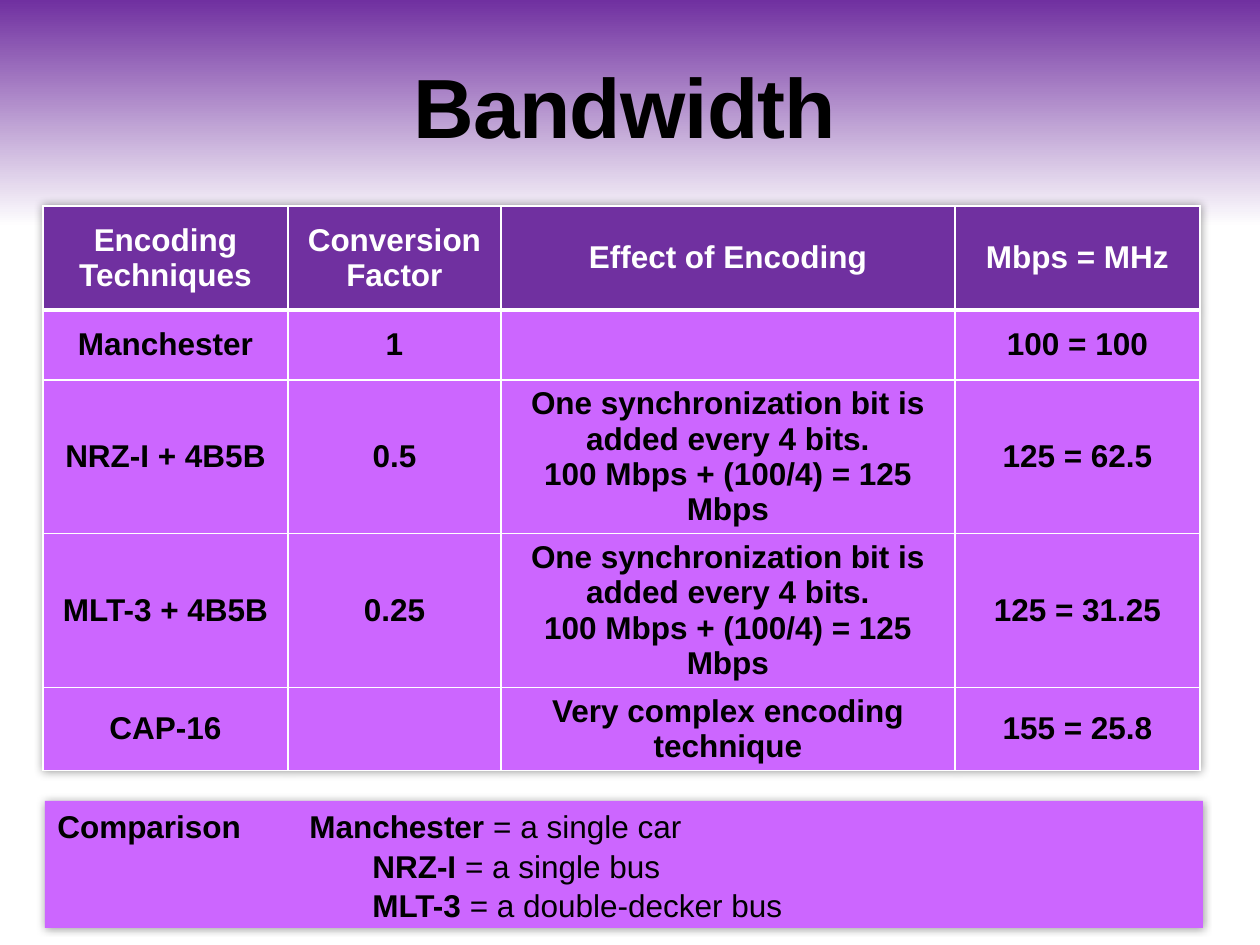
from dataclasses import dataclass

from lxml import etree
from pptx import Presentation
from pptx.dml.color import RGBColor
from pptx.enum.shapes import MSO_SHAPE
from pptx.enum.text import MSO_ANCHOR, MSO_AUTO_SIZE, PP_ALIGN
from pptx.oxml.ns import qn
from pptx.util import Emu, Pt

RECT = MSO_SHAPE.RECTANGLE
TOP, MIDDLE, BOTTOM = MSO_ANCHOR.TOP, MSO_ANCHOR.MIDDLE, MSO_ANCHOR.BOTTOM
LEFT, CENTER = PP_ALIGN.LEFT, PP_ALIGN.CENTER
NO_FIT = MSO_AUTO_SIZE.NONE
SCALE = 914400 / 126


@dataclass(frozen=True)
class Theme:
    font: str = "Arial"
    head: str = "7030A0"
    body: str = "CC66FF"
    dark: str = "000000"
    light: str = "FFFFFF"
    title: int = 48
    text: int = 18


THEME = Theme()
HEADS = ["Encoding Techniques", "Conversion Factor", "Effect of Encoding", "Mbps = MHz"]
SYNC = "One synchronization bit is added every 4 bits.\n100 Mbps + (100/4) = 125 Mbps"
ROWS = [
    HEADS,
    ["Manchester", "1", "", "100 = 100"],
    ["NRZ-I + 4B5B", "0.5", SYNC, "125 = 62.5"],
    ["MLT-3 + 4B5B", "0.25", SYNC, "125 = 31.25"],
    ["CAP-16", "", "Very complex encoding technique", "155 = 25.8"],
]
WIDTHS = [245, 213, 454, 245]
HEIGHTS = [104, 70, 149, 149, 79]
NOTES = [
    ("Comparison\t\tManchester ", "= a single car"),
    ("\tNRZ-I ", "= a single bus"),
    ("\tMLT-3 ", "= a double-decker bus"),
]


def px(count):
    return Emu(round(count * SCALE))


def rgb(code):
    return RGBColor.from_string(code)


def style(para, size, color, bold, align):
    para.alignment = align
    font = para.font
    font.name, font.size, font.bold = THEME.font, Pt(size), bold
    font.color.rgb = rgb(color)


def paint(item, color):
    item.fill.solid()
    item.fill.fore_color.rgb = rgb(color)


def tint(parent, code):
    color = etree.SubElement(parent, qn("a:srgbClr"), val=code)
    return color


def glow():
    effect = etree.Element(qn("a:effectLst"))
    shade = etree.SubElement(effect, qn("a:outerShdw"), blurRad=str(Pt(5)),
                             dist="0", dir="0", algn="ctr", rotWithShape="0")
    etree.SubElement(tint(shade, THEME.dark), qn("a:alpha"), val="40000")
    return effect


def edge(cell, sides):
    props = cell._tc.get_or_add_tcPr()
    for spot, (side, width) in enumerate(sides.items()):
        line = etree.Element(qn(f"a:ln{side}"), w=str(Pt(width)))
        tint(etree.SubElement(line, qn("a:solidFill")), THEME.light)
        props.insert(spot, line)


def add_back(slide):
    fill = slide.background.fill
    fill.gradient()
    fill.gradient_angle = 270
    stops = [(0, THEME.head), (0.24, THEME.light)]
    for stop, (place, color) in zip(fill.gradient_stops, stops):
        stop.position = place
        stop.color.rgb = rgb(color)


def add_title(slide, left, top, width, height):
    title = slide.shapes.title
    title.left, title.top, title.width, title.height = map(px, (left, top, width, height))
    frame = title.text_frame
    frame.text = "Bandwidth"
    frame.vertical_anchor, frame.auto_size = BOTTOM, NO_FIT
    para = frame.paragraphs[0]
    style(para, THEME.title, THEME.dark, True, CENTER)
    para.line_spacing = 0.85
    para.runs[0]._r.get_or_add_rPr().set("spc", "-50")


def add_grid(slide, left, top):
    size = sum(WIDTHS), sum(HEIGHTS)
    table = slide.shapes.add_table(len(ROWS), len(HEADS),
                                   *map(px, (left, top, *size))).table
    table._tbl.tblPr.insert(0, glow())
    for column, width in zip(table.columns, WIDTHS):
        column.width = px(width)
    for index, (row, height, texts) in enumerate(zip(table.rows, HEIGHTS, ROWS)):
        row.height = px(height)
        head = index == 0
        sides = {"L": 1, "R": 1, "T": 3 if index == 1 else 1, "B": 3 if head else 1}
        for cell, text in zip(row.cells, texts):
            cell.text = text
            cell.vertical_anchor = MIDDLE
            paint(cell, THEME.head if head else THEME.body)
            edge(cell, sides)
            for para in cell.text_frame.paragraphs:
                style(para, THEME.text, THEME.light if head else THEME.dark, True, CENTER)


def add_notes(slide, left, top, width, height):
    box = slide.shapes.add_shape(RECT, *map(px, (left, top, width, height)))
    paint(box, THEME.body)
    box.line.fill.background()
    box._element.spPr.append(glow())
    frame = box.text_frame
    frame.word_wrap, frame.vertical_anchor = True, TOP
    for index, (name, claim) in enumerate(NOTES):
        para = frame.add_paragraph() if index else frame.paragraphs[0]
        for text, bold in ((name, True), (claim, False)):
            run = para.add_run()
            run.text, run.font.bold = text, bold
        if index:
            para.level = 4
            props = para._p.get_or_add_pPr()
            props.set("marL", str(px(252)))
            props.set("indent", "0")
            para.space_before = Pt(1)
        style(para, THEME.text, THEME.dark, None, LEFT)


def main():
    deck = Presentation()
    deck.slide_width, deck.slide_height = px(1260), px(945)
    slide = deck.slides.add_slide(deck.slide_layouts[5])
    add_back(slide)
    add_title(slide, 105, 50, 1040, 112)
    add_grid(slide, 43, 206)
    add_notes(slide, 45, 801, 1158, 127)
    deck.save("out.pptx")


if __name__ == "__main__":
    main()
